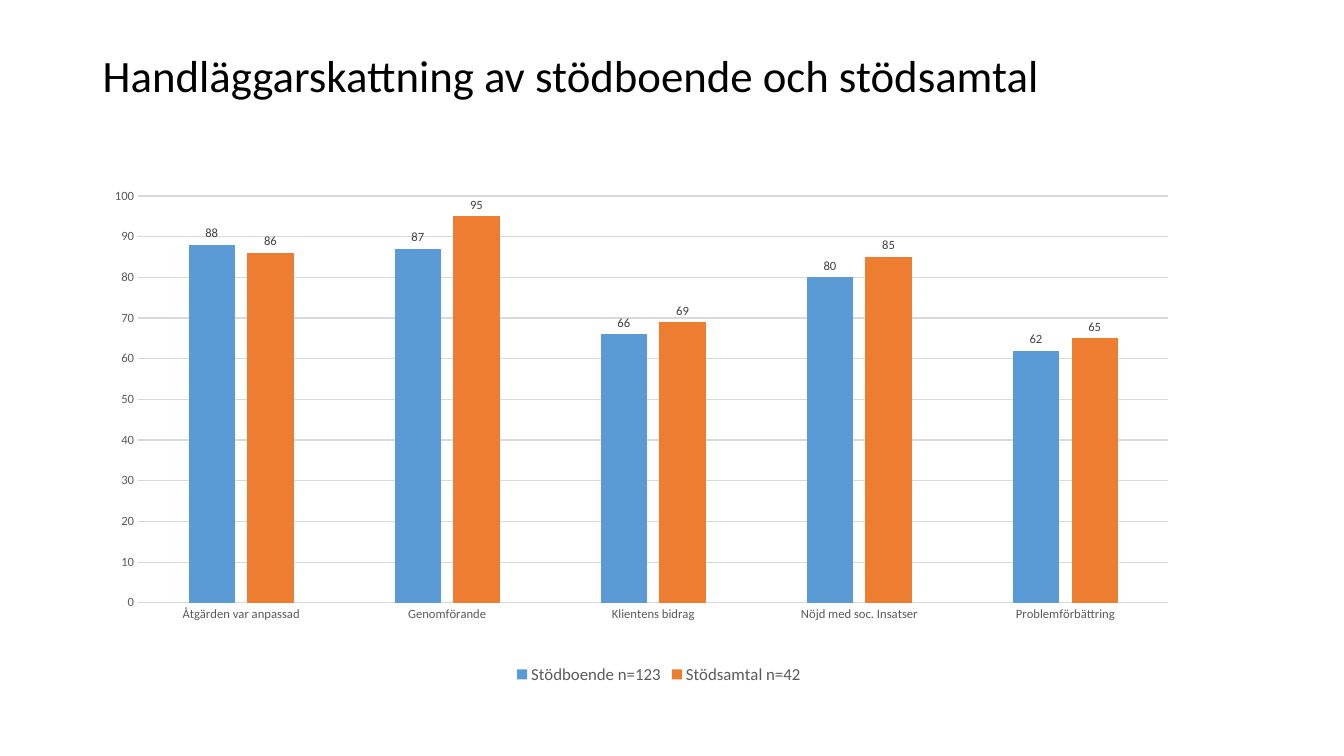
from lxml import etree
from pptx import Presentation
from pptx.chart.data import CategoryChartData
from pptx.dml.color import RGBColor
from pptx.enum.chart import XL_CHART_TYPE, XL_LABEL_POSITION, XL_LEGEND_POSITION, XL_TICK_MARK
from pptx.enum.text import MSO_ANCHOR
from pptx.oxml.ns import qn
from pptx.util import Inches, Pt

COLUMNS = XL_CHART_TYPE.COLUMN_CLUSTERED
ABOVE = XL_LABEL_POSITION.OUTSIDE_END
BOTTOM = XL_LEGEND_POSITION.BOTTOM
NO_TICK = XL_TICK_MARK.NONE
MIDDLE = MSO_ANCHOR.MIDDLE

FACE = "Calibri"
GREY, RULE = "595959", "D9D9D9"
TITLE = "Handläggarskattning av stödboende och stödsamtal"
GROUPS = ["Åtgärden var anpassad", "Genomförande", "Klientens bidrag",
          "Nöjd med soc. Insatser", "Problemförbättring"]
SERIES = [
    ("Stödboende n=123", "5B9BD5", [88, 87, 66, 80, 62]),
    ("Stödsamtal n=42", "ED7D31", [86, 95, 69, 85, 65]),
]
PLOT = {"x": 0.04, "y": 0.08, "w": 0.91, "h": 0.76}


def color(code):
    return RGBColor.from_string(code)


def put(target, values):
    """Set each named attribute of the target."""
    for name, value in values.items():
        setattr(target, name, value)


def style(font, size, code):
    put(font, {"name": FACE, "size": Pt(size), "bold": False})
    font.color.rgb = color(code)


def rule(line):
    line.width = Pt(0.75)
    line.color.rgb = color(RULE)


def place_plot(chart):
    """Fix the inner plot area as fractions of the chart frame."""
    area = chart._chartSpace.chart.plotArea
    for old in area.findall(qn("c:layout")):
        area.remove(old)
    layout = etree.Element(qn("c:layout"))
    manual = etree.SubElement(layout, qn("c:manualLayout"))
    parts = {"layoutTarget": "inner", "xMode": "edge", "yMode": "edge", **PLOT}
    for name, value in parts.items():
        etree.SubElement(manual, qn("c:" + name)).set("val", str(value))
    area.insert(0, layout)


def add_title(slide, box):
    frame = slide.shapes.add_textbox(*map(Inches, box)).text_frame
    put(frame, {"word_wrap": True, "vertical_anchor": MIDDLE})
    line = frame.paragraphs[0]
    line.line_spacing = 0.9
    run = line.add_run()
    run.text = TITLE
    style(run.font, 32, "000000")


def style_axes(chart):
    groups, scale = chart.category_axis, chart.value_axis
    for axis in (groups, scale):
        put(axis, {"major_tick_mark": NO_TICK, "minor_tick_mark": NO_TICK})
        style(axis.tick_labels.font, 9, GREY)
    rule(groups.format.line)
    put(scale, {"minimum_scale": 0, "maximum_scale": 100, "major_unit": 10})
    scale.format.line.fill.background()
    rule(scale.major_gridlines.format.line)


def add_bars(slide, box):
    data = CategoryChartData()
    data.categories = GROUPS
    for name, _, values in SERIES:
        data.add_series(name, values)
    chart = slide.shapes.add_chart(COLUMNS, *map(Inches, box), data).chart
    put(chart, {"has_title": False, "has_legend": True})
    style(chart.font, 10, "000000")
    put(chart.legend, {"position": BOTTOM, "include_in_layout": False})
    style(chart.legend.font, 12, GREY)

    plot = chart.plots[0]
    put(plot, {"gap_width": 219, "overlap": -27, "vary_by_categories": False})
    for bars, (_, code, _) in zip(plot.series, SERIES):
        bars.format.fill.solid()
        bars.format.fill.fore_color.rgb = color(code)
        labels = bars.data_labels
        put(labels, {"show_value": True, "position": ABOVE})
        style(labels.font, 9, "404040")
    style_axes(chart)
    place_plot(chart)


def main():
    deck = Presentation()
    put(deck, {"slide_width": Inches(13.33), "slide_height": Inches(7.5)})
    slide = deck.slides.add_slide(deck.slide_layouts[6])
    add_title(slide, (0.92, 0.4, 11.5, 0.74))
    add_bars(slide, (0.92, 1.52, 11.23, 5.31))
    deck.save("out.pptx")


if __name__ == "__main__":
    main()
